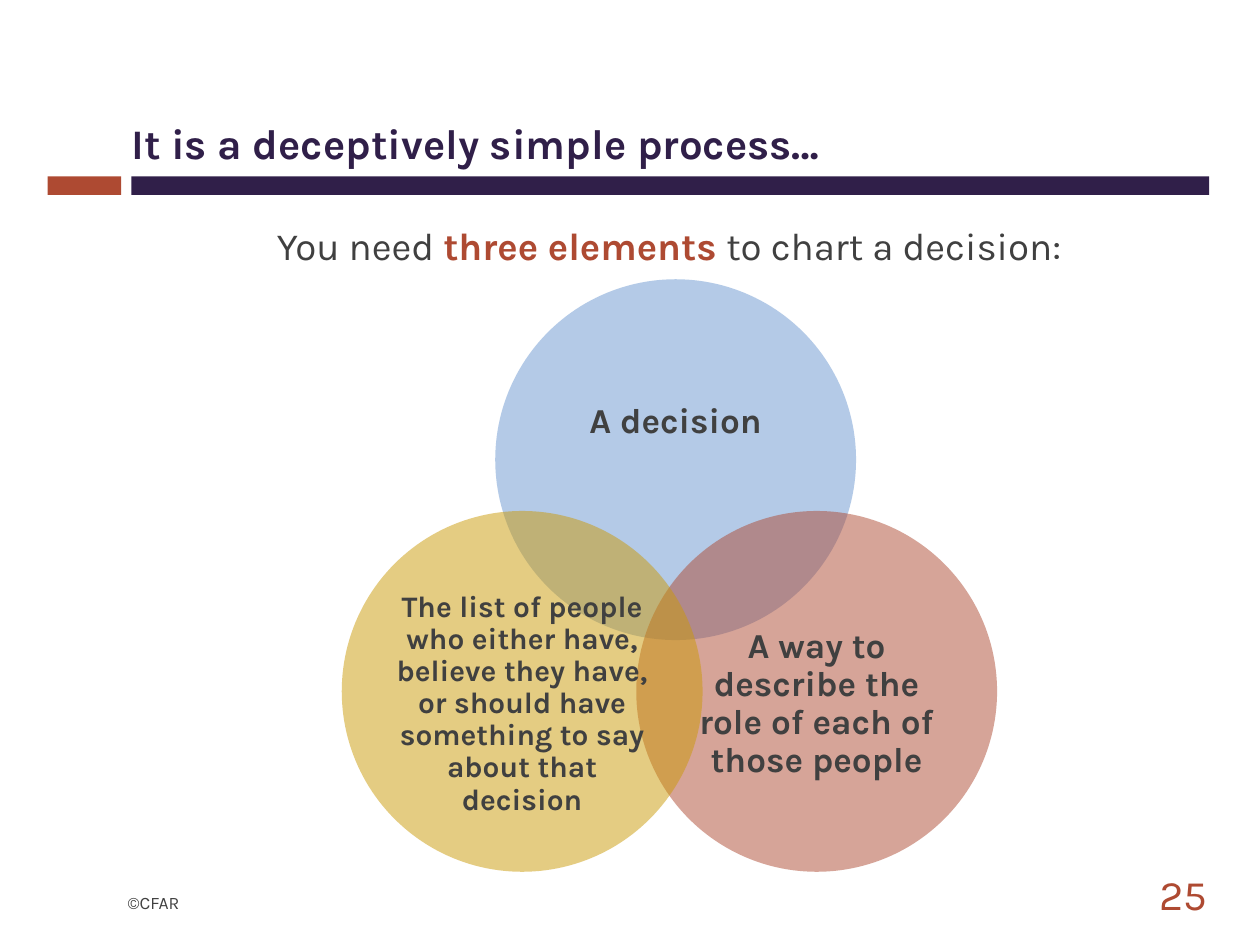
from lxml.etree import SubElement
from pptx import Presentation
from pptx.dml.color import RGBColor
from pptx.enum.shapes import MSO_SHAPE
from pptx.enum.text import MSO_ANCHOR, MSO_AUTO_SIZE, PP_ALIGN
from pptx.oxml.ns import qn
from pptx.util import Pt

FONT = "Karla"
COLORS = {
    "rust": "AE4A32",
    "purple": "301F49",
    "text": "404040",
    "blue": "6A97D0",
    "gold": "CB9A07",
}
TITLE_LAYOUT = 5
CIRCLE_SIZE = 206.2


def color(name):
    return RGBColor.from_string(COLORS[name])


def write_text(shape, runs, size, align=PP_ALIGN.LEFT, anchor=MSO_ANCHOR.MIDDLE,
               margins=(0, 0, 0, 0), line_spacing=None):
    """Fill a shape with one paragraph; each run is (text, color name, bold)."""
    frame = shape.text_frame
    frame.word_wrap = True
    frame.auto_size = MSO_AUTO_SIZE.NONE
    frame.vertical_anchor = anchor
    (frame.margin_left, frame.margin_top,
     frame.margin_right, frame.margin_bottom) = map(Pt, margins)
    paragraph = frame.paragraphs[0]
    paragraph.alignment = align
    if line_spacing:
        paragraph.line_spacing = line_spacing
    for text, color_name, bold in runs:
        run = paragraph.add_run()
        run.text = text
        run.font.name = FONT
        run.font.size = Pt(size)
        run.font.bold = bold
        run.font.color.rgb = color(color_name)


def add_text(slide, box, runs, size, **options):
    shape = slide.shapes.add_textbox(*map(Pt, box))
    write_text(shape, runs, size, **options)


def add_filled_shape(slide, kind, box, fill):
    shape = slide.shapes.add_shape(kind, *map(Pt, box))
    shape.shadow.inherit = False
    shape.fill.solid()
    shape.fill.fore_color.rgb = color(fill)
    shape.line.fill.background()
    return shape


def add_circle(slide, left, top, fill, text, size, margins):
    """Add a half-transparent circle of the Venn diagram."""
    box = (left, top, CIRCLE_SIZE, CIRCLE_SIZE)
    circle = add_filled_shape(slide, MSO_SHAPE.OVAL, box, fill)
    fill_color = next(circle.element.spPr.iter(qn("a:srgbClr")))
    SubElement(fill_color, qn("a:alpha"), val="50000")
    write_text(circle, [(text, "text", True)], size, align=PP_ALIGN.CENTER,
               margins=margins, line_spacing=0.9)


def set_title(slide, text):
    title = slide.shapes.title
    title.left, title.top, title.width, title.height = map(Pt, (75, 36, 615, 63.4))
    write_text(title, [(text, "purple", True)], 24,
               anchor=MSO_ANCHOR.BOTTOM, margins=(0, 3.6, 7.2, 3.6))


def main():
    presentation = Presentation()
    presentation.slide_width = Pt(720)
    presentation.slide_height = Pt(540)
    slide = presentation.slides.add_slide(presentation.slide_layouts[TITLE_LAYOUT])

    set_title(slide, "It is a deceptively simple process…")
    for left, width, fill in ((27.2, 42, "rust"), (75, 616, "purple")):
        add_filled_shape(slide, MSO_SHAPE.RECTANGLE, (left, 100.8, width, 10.6), fill)

    add_text(slide, (75.6, 129, 613.4, 34), [
        ("You need ", "text", False),
        ("three elements ", "rust", True),
        ("to chart a decision:", "text", False),
    ], 22, align=PP_ALIGN.CENTER, anchor=MSO_ANCHOR.TOP,
        margins=(0.7, 0.7, 0.7, 0.7), line_spacing=0.9)

    lower_top = 292
    add_circle(slide, 283, 159.6, "blue", "A decision", 20, (5, 13.7, 5, 56.2))
    add_circle(slide, 363.6, lower_top, "rust",
               "A way to describe the role of each of those people",
               20, (5, 31.7, 5, 17.3))
    add_circle(slide, 195.3, lower_top, "gold",
               "The list of people who either have, believe they have, "
               "or should have something to say about that decision",
               17, (0, 31.7, 0, 17.3))

    add_text(slide, (73, 505, 34.6, 22), [("©CFAR", "text", False)], 10)
    add_text(slide, (641, 492, 49, 37.4), [("25", "rust", False)], 24,
             align=PP_ALIGN.RIGHT)

    presentation.save("out.pptx")


if __name__ == "__main__":
    main()
